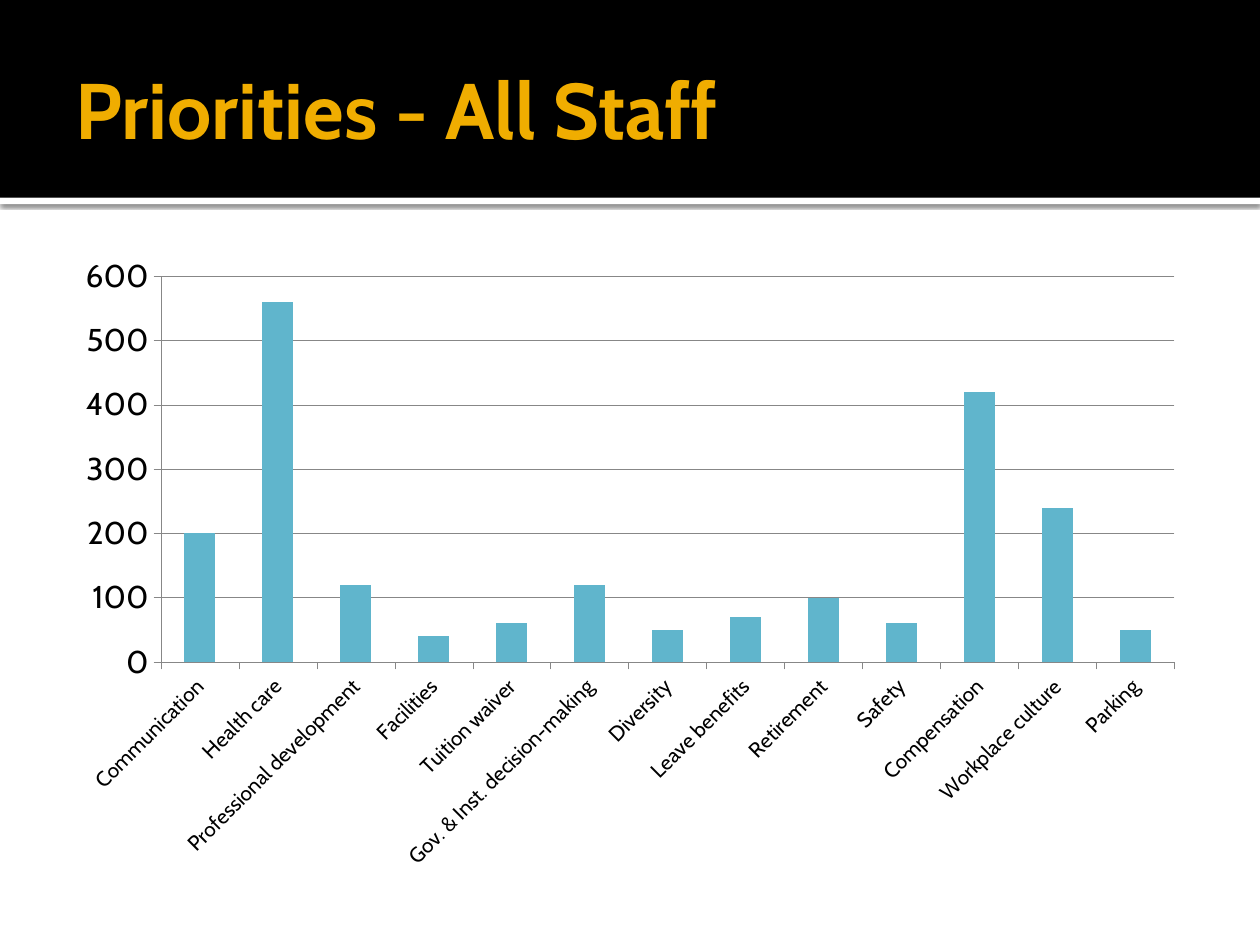
from dataclasses import dataclass

from lxml.etree import SubElement
from pptx import Presentation
from pptx.chart.data import CategoryChartData
from pptx.dml.color import RGBColor
from pptx.enum.chart import XL_CHART_TYPE as ChartType, XL_TICK_MARK as TickMark
from pptx.enum.shapes import MSO_SHAPE as Shape
from pptx.enum.text import MSO_ANCHOR as Anchor
from pptx.oxml.ns import qn
from pptx.util import Emu, Inches, Pt

FONT = "Cabin"
BLACK, WHITE, GOLD, BLUE, GRAY = "000000", "FFFFFF", "F0AD00", "60B5CC", "878787"
WIDTH, HEIGHT = Inches(10), Inches(7.5)
BAND = 20.93

PRIORITIES = {
    "Communication": 200,
    "Health care": 560,
    "Professional development": 120,
    "Facilities": 40,
    "Tuition waiver": 60,
    "Gov. & Inst. decision-making": 120,
    "Diversity": 50,
    "Leave benefits": 70,
    "Retirement": 100,
    "Safety": 60,
    "Compensation": 420,
    "Workplace culture": 240,
    "Parking": 50,
}


@dataclass(frozen=True)
class PercentArea:
    left: float
    top: float
    width: float
    height: float

    def box(self) -> tuple:
        return (Emu(round(self.left * WIDTH / 100)), Emu(round(self.top * HEIGHT / 100)),
                Emu(round(self.width * WIDTH / 100)), Emu(round(self.height * HEIGHT / 100)))


@dataclass(frozen=True)
class Band:
    area: PercentArea
    color: str
    shadow: bool = False


BANDS = (
    Band(PercentArea(0, BAND, 100, 0.67), WHITE, shadow=True),
    Band(PercentArea(0, 0, 100, BAND), BLACK),
)
TITLE_AREA = PercentArea(5, 2.27, 90, 18.27)
CHART_AREA = PercentArea(5, 25.87, 90, 67.47)


def rgb(color: str) -> RGBColor:
    return RGBColor.from_string(color)


def style_font(font, *, size: float, color: str = BLACK, bold: bool = False) -> None:
    font.name, font.size, font.bold = FONT, Pt(size), bold
    font.color.rgb = rgb(color)


def add_shadow(shape) -> None:
    effects = shape._element.spPr.find(qn("a:effectLst"))
    shadow = SubElement(effects, qn("a:outerShdw"), blurRad=str(Pt(2.5)),
                        dist=str(Pt(0.8)), dir="5400000", algn="t", rotWithShape="0")
    tint = SubElement(shadow, qn("a:srgbClr"), val=BLACK)
    SubElement(tint, qn("a:alpha"), val="60000")


def draw_band(slide, band: Band) -> None:
    shape = slide.shapes.add_shape(Shape.RECTANGLE, *band.area.box())
    shape.shadow.inherit = False
    shape.fill.solid()
    shape.fill.fore_color.rgb = rgb(band.color)
    shape.line.fill.background()
    if band.shadow:
        add_shadow(shape)


def add_text(slide, text: str, area: PercentArea, **font_format) -> None:
    frame = slide.shapes.add_textbox(*area.box()).text_frame
    frame.word_wrap = True
    frame.vertical_anchor = Anchor.MIDDLE
    frame.margin_left = Inches(0.1)
    frame.margin_right = frame.margin_top = frame.margin_bottom = Inches(0.05)
    run = frame.paragraphs[0].add_run()
    run.text = text
    style_font(run.font, **font_format)


def style_line(line) -> None:
    line.color.rgb = rgb(GRAY)
    line.width = Pt(0.25)


def style_axis(axis, size: float) -> None:
    axis.major_tick_mark = TickMark.OUTSIDE
    axis.minor_tick_mark = TickMark.NONE
    style_font(axis.tick_labels.font, size=size)
    style_line(axis.format.line)


def draw_chart(slide, area: PercentArea) -> None:
    data = CategoryChartData()
    data.categories = list(PRIORITIES)
    data.add_series("Series 1", list(PRIORITIES.values()))
    chart = slide.shapes.add_chart(ChartType.COLUMN_CLUSTERED, *area.box(), data).chart
    chart.has_legend = chart.has_title = False
    style_font(chart.font, size=18)

    columns = chart.plots[0]
    columns.vary_by_categories = False
    columns.gap_width = 150
    fill = columns.series[0].format.fill
    fill.solid()
    fill.fore_color.rgb = rgb(BLUE)

    topics, votes = chart.category_axis, chart.value_axis
    style_axis(topics, 12)
    style_axis(votes, 18)
    topics._element.find(qn("c:txPr")).find(qn("a:bodyPr")).set("rot", "-2700000")
    votes.minimum_scale, votes.maximum_scale, votes.major_unit = 0, 600, 100
    votes.has_major_gridlines = True
    style_line(votes.major_gridlines.format.line)


def main() -> None:
    deck = Presentation()
    deck.slide_width, deck.slide_height = WIDTH, HEIGHT
    slide = deck.slides.add_slide(deck.slide_layouts[6])
    for band in BANDS:
        draw_band(slide, band)
    add_text(slide, "Priorities - All Staff", TITLE_AREA, size=45, color=GOLD, bold=True)
    draw_chart(slide, CHART_AREA)
    deck.save("out.pptx")


if __name__ == "__main__":
    main()
